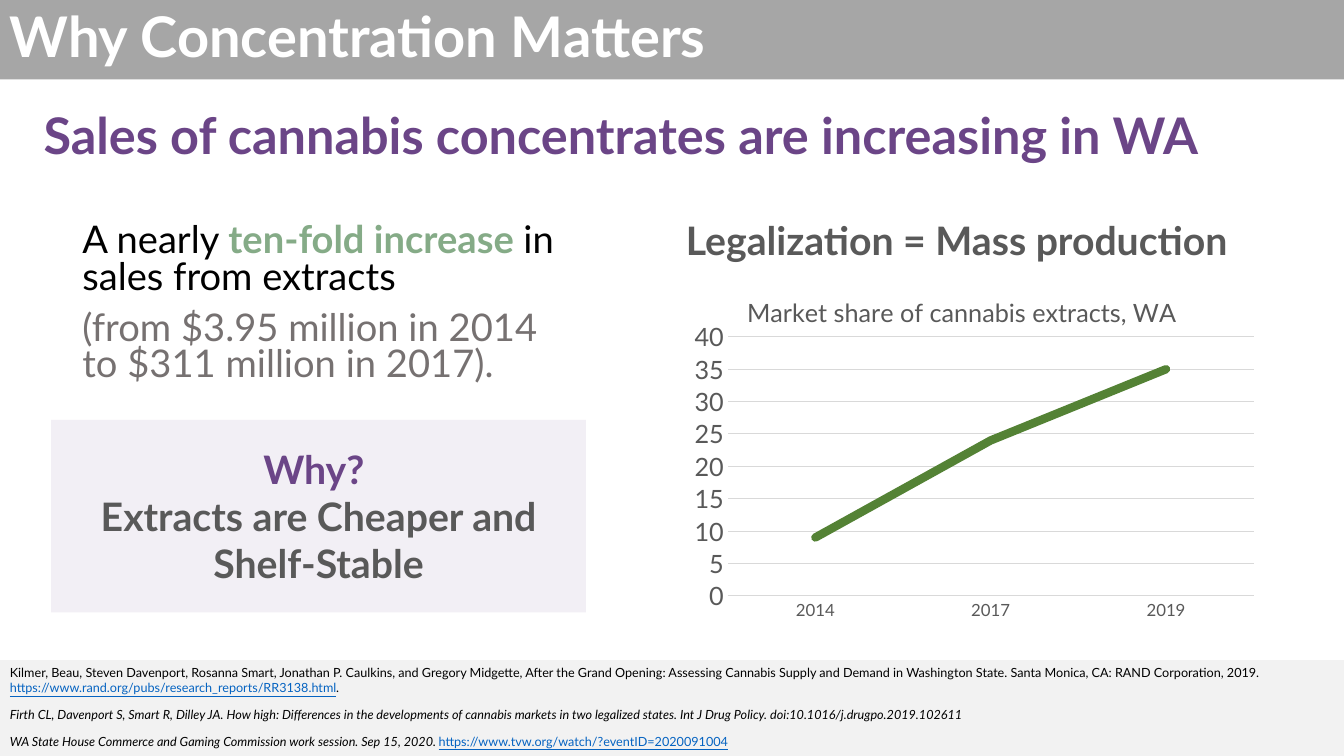
import pptx
import pptx.chart.data
import pptx.dml.color
import pptx.enum.chart
import pptx.enum.shapes
import pptx.enum.text
import pptx.oxml
import pptx.oxml.ns
import pptx.util
from dataclasses import dataclass

ALIGN = pptx.enum.text.PP_ALIGN
ANCHOR = pptx.enum.text.MSO_ANCHOR
WIDE, HIGH = 13.33, 7.5


@dataclass(frozen=True)
class Theme:
    face: str = "Lato"
    white: str = "FFFFFF"
    black: str = "000000"
    band: str = "A6A6A6"
    purple: str = "6B4587"
    sage: str = "85AB87"
    gray: str = "767171"
    dark: str = "595959"
    panel: str = "F2EFF5"
    foot: str = "F2F2F2"
    link: str = "0563C1"
    grid: str = "D9D9D9"
    trend: str = "548235"
    banner: float = 40
    head: float = 36
    sub: float = 28
    body: float = 27.2
    axis: float = 18
    label: float = 12
    note: float = 9


T = Theme()


def rgb(code):
    return pptx.dml.color.RGBColor.from_string(code)


def grid(col, row, cols, rows):
    """Box in inches on a grid of 100 columns by 100 rows."""
    return col * WIDE / 100, row * HIGH / 100, cols * WIDE / 100, rows * HIGH / 100


def part(box, x, y, w, h):
    """Box inside a box, given as shares of its size."""
    left, top, wide, high = box
    return left + x * wide, top + y * high, w * wide, h * high


def place(box):
    return [pptx.util.Inches(side) for side in box]


def style(font, size, color, **more):
    values = {"name": T.face, "size": pptx.util.Pt(size), **more}
    for key, value in values.items():
        setattr(font, key, value)
    font.color.rgb = rgb(color)


def write(shape, lines, size, anchor=ANCHOR.TOP, **form):
    """Each line is a list of (text, color, font values)."""
    frame = shape.text_frame
    frame.word_wrap = True
    frame.vertical_anchor = anchor
    gap = form.pop("gap", 0)
    form = {"alignment": ALIGN.LEFT, **form}
    for index, line in enumerate(lines):
        para = frame.add_paragraph() if index else frame.paragraphs[0]
        for key, value in form.items():
            setattr(para, key, value)
        if index and gap:
            para.space_before = pptx.util.Pt(gap)
        for text, color, more in line:
            run = para.add_run()
            run.text = text
            style(run.font, size, color, **more)


def panel(slide, box, fill):
    shape = slide.shapes.add_shape(pptx.enum.shapes.MSO_SHAPE.RECTANGLE, *place(box))
    shape.shadow.inherit = False
    shape.fill.solid()
    shape.fill.fore_color.rgb = rgb(fill)
    shape.line.fill.background()
    return shape


def label(slide, box, lines, size, **form):
    write(slide.shapes.add_textbox(*place(box)), lines, size, **form)


def layout(owner, inner=False, **shares):
    """Fix a chart part at shares of the chart's size."""
    modes = {"xMode": "edge", "yMode": "edge", **shares}
    if inner:
        modes = {"layoutTarget": "inner", **modes}
    marks = "".join(f'<c:{key} val="{value}"/>' for key, value in modes.items())
    space = pptx.oxml.ns.nsdecls("c")
    for old in owner.findall(pptx.oxml.ns.qn("c:layout")):
        owner.remove(old)
    node = pptx.oxml.parse_xml(
        f"<c:layout {space}><c:manualLayout>{marks}</c:manualLayout></c:layout>")
    text = owner.find(pptx.oxml.ns.qn("c:tx"))
    owner.insert(0 if text is None else 1, node)


def banner(slide, box):
    write(panel(slide, box, T.band),
          [[("Why Concentration Matters", T.white, {"bold": True})]],
          T.banner, ANCHOR.MIDDLE, line_spacing=0.9)


def header(slide, box):
    text = "Sales of cannabis concentrates are increasing in WA"
    label(slide, box, [[(text, T.purple, {"bold": True})]], T.head, line_spacing=0.9)


def reasons(slide, box):
    # Sales growth
    label(slide, part(box, 0.04, 0.02, 0.92, 0.43), [
        [("A nearly ", T.black, {}),
         ("ten-fold increase ", T.sage, {"bold": True}),
         ("in sales from extracts", T.black, {})],
        [("(from $3.95 million in 2014 to $311 million in 2017).", T.gray, {})],
    ], T.body, line_spacing=0.8, gap=10)
    # Why panel
    write(panel(slide, part(box, 0, 0.52, 1, 0.48), T.panel), [
        [("Why? ", T.purple, {"bold": True})],
        [("Extracts are Cheaper and Shelf-Stable", T.dark, {"bold": True})],
    ], T.sub, ANCHOR.MIDDLE, alignment=ALIGN.CENTER)


def market(slide, box):
    label(slide, part(box, 0.02, 0, 0.98, 0.12),
          [[("Legalization = Mass production", T.dark, {"bold": True})]], T.sub)
    # Line chart
    data = pptx.chart.data.CategoryChartData()
    data.categories = ["2014", "2017", "2019"]
    data.add_series("Series 1", (9, 24, 35))
    chart = slide.shapes.add_chart(pptx.enum.chart.XL_CHART_TYPE.LINE,
                                   *place(part(box, 0, 0.12, 0.92, 0.88)), data).chart
    style(chart.font, T.label, T.dark)
    chart.has_legend = False
    chart.has_title = True
    title = chart.chart_title
    title.include_in_layout = False
    run = title.text_frame.paragraphs[0].add_run()
    run.text = "Market share of cannabis extracts, WA"
    style(run.font, T.axis, T.dark, bold=False)
    layout(title._element, x=0.13, y=0.05)
    layout(chart._chartSpace.chart.plotArea, True, x=0.106, y=0.161, w=0.856, h=0.611)
    # Axes
    none = pptx.enum.chart.XL_TICK_MARK.NONE
    for axis, size in ((chart.category_axis, T.label), (chart.value_axis, T.axis)):
        axis.major_tick_mark = axis.minor_tick_mark = none
        style(axis.tick_labels.font, size, T.dark)
    scale = chart.value_axis
    for key, value in {"minimum_scale": 0, "maximum_scale": 40, "major_unit": 5}.items():
        setattr(scale, key, value)
    scale.format.line.fill.background()
    # Lines
    curve = chart.plots[0].series[0]
    chart.plots[0].vary_by_categories = False
    curve.smooth = False
    curve.marker.style = pptx.enum.chart.XL_MARKER_STYLE.NONE
    for line, color, width in ((chart.category_axis.format.line, T.grid, 0.75),
                               (scale.major_gridlines.format.line, T.grid, 0.75),
                               (curve.format.line, T.trend, 6)):
        line.color.rgb = rgb(color)
        line.width = pptx.util.Pt(width)
    curve.format.line._ln.set("cap", "rnd")


def sources(slide, box):
    slant, under = {"italic": True}, {"underline": True}
    write(panel(slide, box, T.foot), [
        [("Kilmer, Beau, Steven Davenport, Rosanna Smart, Jonathan P. Caulkins, and Gregory "
          "Midgette, After the Grand Opening: Assessing Cannabis Supply and Demand in "
          "Washington State. Santa Monica, CA: RAND Corporation, 2019. ", T.black, {}),
         ("https://www.rand.org/pubs/research_reports/RR3138.html", T.link, under),
         (".", T.black, {})],
        [("Firth CL, Davenport S, Smart R, Dilley JA. How high: Differences in the "
          "developments of cannabis markets in two legalized states. Int J Drug Policy. "
          "doi:10.1016/j.drugpo.2019.102611", T.black, slant)],
        [("WA State House Commerce and Gaming Commission work session. Sep 15, 2020. ",
          T.black, slant),
         ("https://www.tvw.org/watch/?eventID=2020091004", T.link, under)],
    ], T.note, gap=8.4)


def main():
    deck = pptx.Presentation()
    deck.slide_width, deck.slide_height = place((WIDE, HIGH))
    slide = deck.slides.add_slide(deck.slide_layouts[6])
    banner(slide, grid(0, 0, 100, 10.5))
    header(slide, grid(2.5, 14, 95, 9.5))
    reasons(slide, grid(3.8, 28, 39.8, 53))
    market(slide, grid(49.3, 27.9, 49.7, 63.7))
    sources(slide, grid(0, 87.3, 100, 12.7))
    deck.save("out.pptx")


if __name__ == "__main__":
    main()
